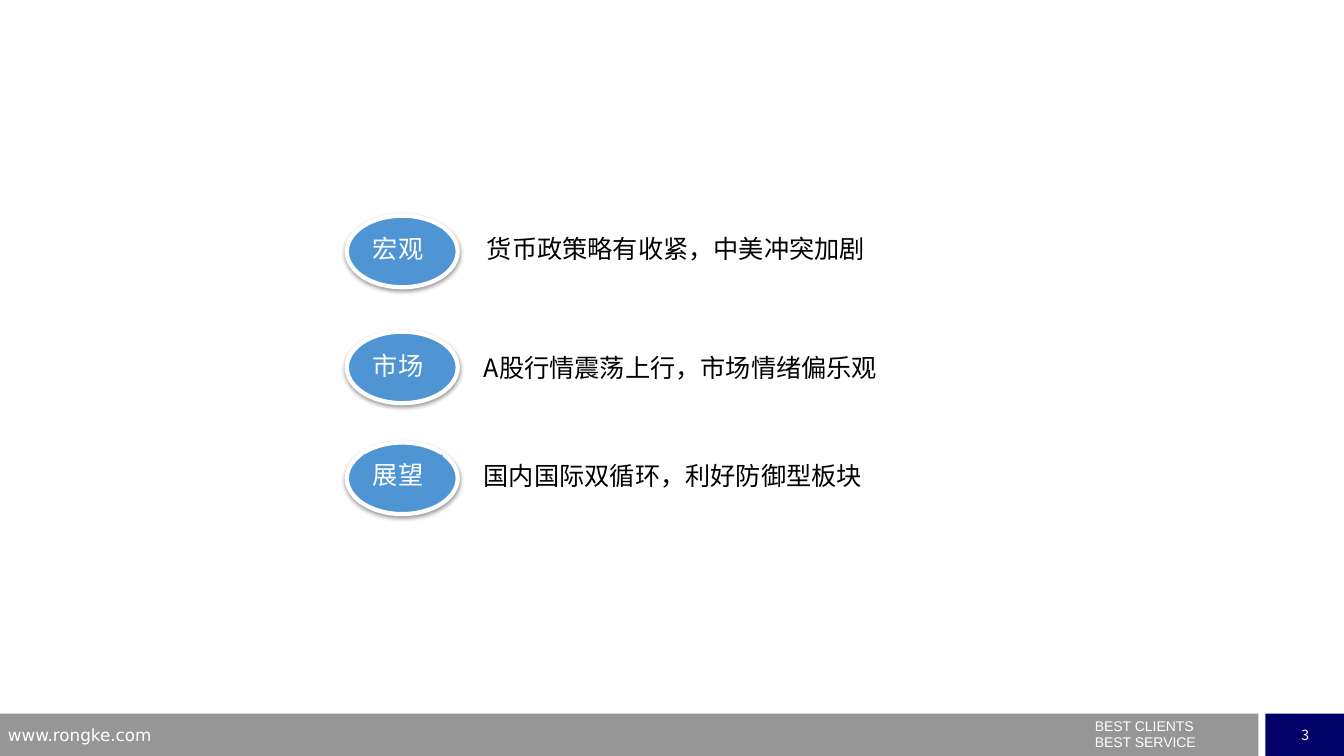
from lxml import etree
from pptx import Presentation
from pptx.dml.color import RGBColor
from pptx.enum.shapes import MSO_SHAPE
from pptx.enum.text import MSO_ANCHOR, PP_ALIGN
from pptx.oxml.ns import qn
from pptx.util import Inches, Pt

RECT, OVAL = MSO_SHAPE.RECTANGLE, MSO_SHAPE.OVAL
TOP, MIDDLE = MSO_ANCHOR.TOP, MSO_ANCHOR.MIDDLE
LEFT, CENTER = PP_ALIGN.LEFT, PP_ALIGN.CENTER

COLORS = {"white": "FFFFFF", "black": "000000", "gray": "969696",
          "navy": "000066", "blue": "4F95D4"}
CJK, SANS, WEB = "Noto Sans CJK SC", "Arial", "DejaVu Sans"


def rgb(name):
    return RGBColor.from_string(COLORS[name])


class Deck:
    def __init__(self):
        self.prs = Presentation()
        self.prs.slide_width = Inches(13.33)
        self.prs.slide_height = Inches(7.5)
        self.slide = self.prs.slides.add_slide(self.prs.slide_layouts[6])

    def shape(self, kind, box, fill):
        item = self.slide.shapes.add_shape(kind, *map(Inches, box))
        item.shadow.inherit = False
        item.fill.solid()
        item.fill.fore_color.rgb = rgb(fill)
        item.line.fill.background()
        return item

    def oval(self, box):
        """Add a blue ellipse with a white rim and a soft shadow below."""
        item = self.shape(OVAL, box, "blue")
        item.line.color.rgb = rgb("white")
        item.line.width = Pt(3)
        effects = item._element.spPr.find(qn("a:effectLst"))
        glow = etree.SubElement(effects, qn("a:outerShdw"), blurRad=str(Pt(3.1)),
                                dist=str(Pt(1.6)), dir="5400000", rotWithShape="0")
        tint = etree.SubElement(glow, qn("a:srgbClr"), val=COLORS["black"])
        etree.SubElement(tint, qn("a:alpha"), val="38000")

    def label(self, item, lines, size, font=CJK, color="white", align=LEFT,
              anchor=TOP, wrap=True, pitch=None):
        """Fill a shape with lines; pitch is (line spacing, points before)."""
        frame = item.text_frame
        frame.word_wrap = wrap
        frame.vertical_anchor = anchor
        for i, line in enumerate(lines):
            para = frame.add_paragraph() if i else frame.paragraphs[0]
            para.alignment = align
            if pitch:
                para.line_spacing = pitch[0]
                if i:
                    para.space_before = Pt(pitch[1])
            run = para.add_run()
            run.text = line
            run.font.size = Pt(size)
            run.font.name = font
            run.font.color.rgb = rgb(color)
            etree.SubElement(run._r.get_or_add_rPr(), qn("a:ea"), typeface=font)

    def text(self, box, lines, size, **style):
        item = self.slide.shapes.add_textbox(*map(Inches, box))
        self.label(item, lines, size, **style)

    def footer(self):
        self.shape(RECT, (0, 7.08, 12.48, 0.42), "gray")
        page = self.shape(RECT, (12.55, 7.08, 0.79, 0.42), "navy")
        self.label(page, ["3"], 10, align=CENTER, anchor=MIDDLE, wrap=False)
        self.text((10.76, 7.14, 2.56, 0.36), ["BEST CLIENTS", "BEST SERVICE"],
                  10, font=SANS, pitch=(0.5, 5.75))
        self.text((-0.02, 7.14, 3.22, 0.26), ["www.rongke.com"], 12, font=WEB)

    def topic(self, name, note, tops, left, width):
        """Add one row; tops holds the oval, name and note tops."""
        oval, tag, body = tops
        self.oval((3.44, oval, 1.1, 0.71))
        item = self.shape(RECT, (3.6, tag, 0.79, 0.4), "blue")
        self.label(item, [name], 18)
        self.text((left, body, width, 0.4), [note], 18, color="black")


def main():
    deck = Deck()
    deck.footer()
    topics = [
        ("宏观", "货币政策略有收紧，中美冲突加剧", (2.14, 2.27, 2.27), 4.73, 5.49),
        ("市场", "A股行情震荡上行，市场情绪偏乐观", (3.29, 3.43, 3.45), 4.7, 4.16),
        ("展望", "国内国际双循环，利好防御型板块", (4.39, 4.51, 4.52), 4.7, 4.16),
    ]
    for topic in topics:
        deck.topic(*topic)
    deck.prs.save("out.pptx")


if __name__ == "__main__":
    main()
